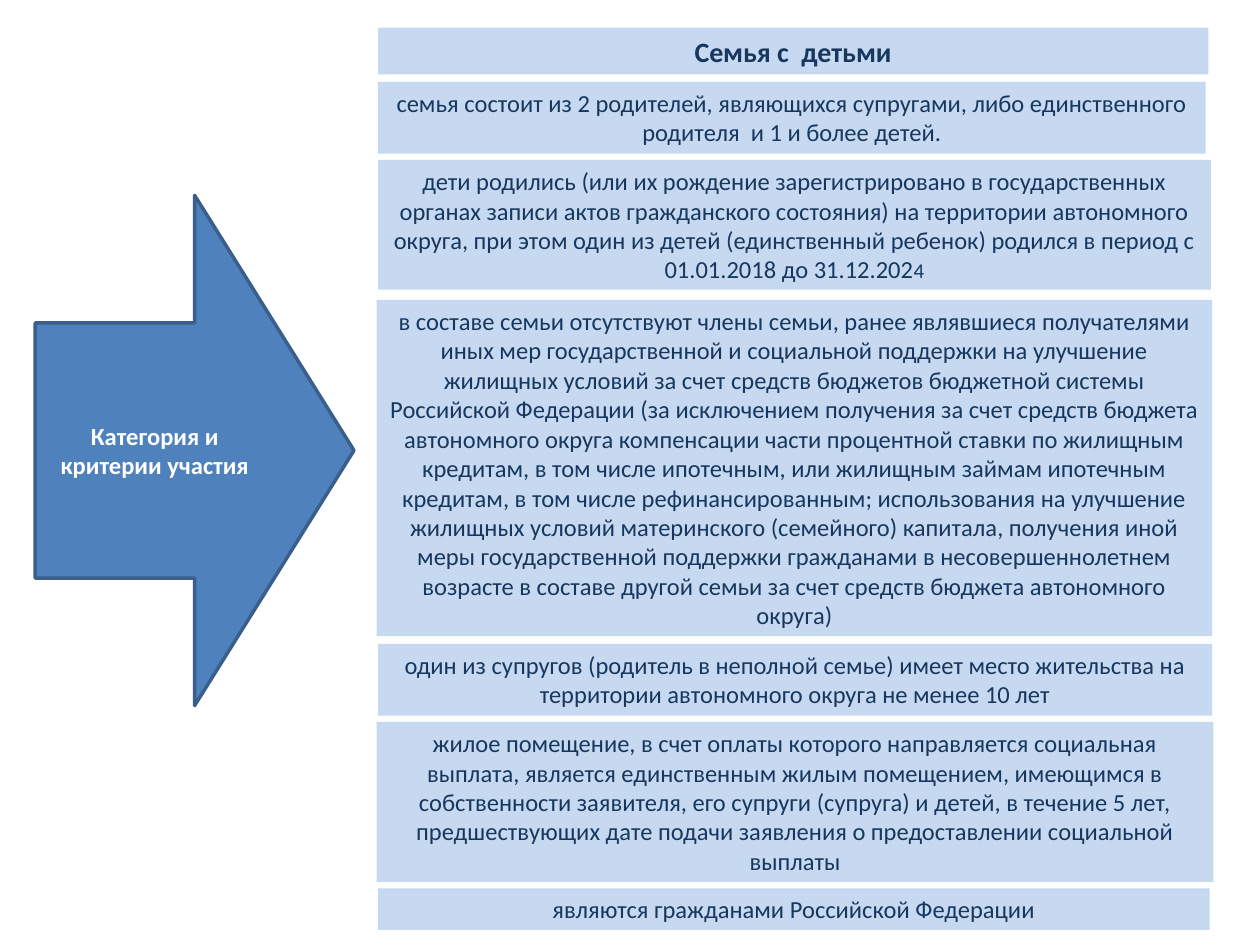
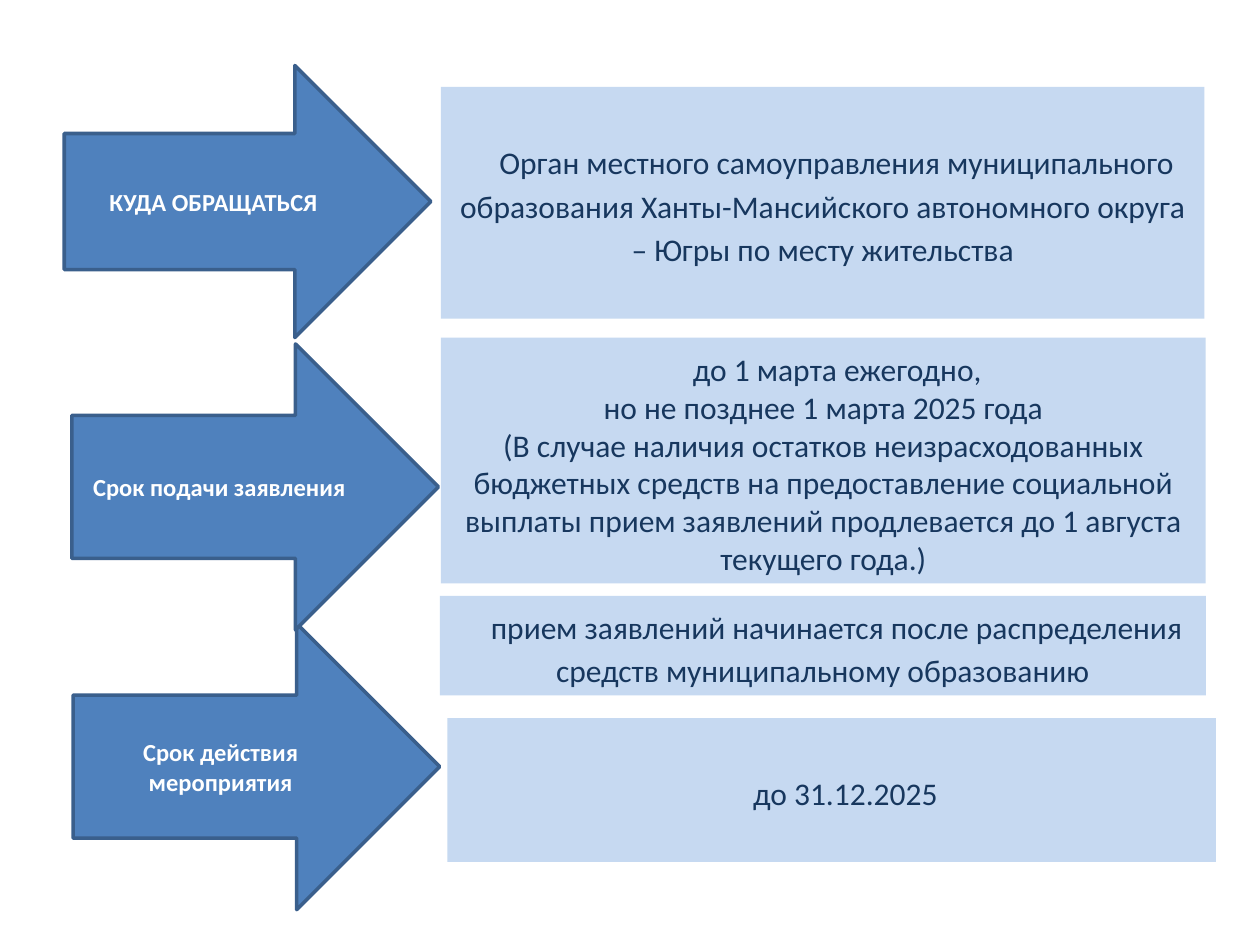
from pptx import Presentation
from pptx.dml.color import RGBColor
from pptx.enum.shapes import MSO_SHAPE
from pptx.enum.text import MSO_ANCHOR, MSO_AUTO_SIZE, PP_ALIGN
from pptx.util import Inches, Pt

RECTANGLE, ARROW = MSO_SHAPE.RECTANGLE, MSO_SHAPE.RIGHT_ARROW
TOP, MIDDLE = MSO_ANCHOR.TOP, MSO_ANCHOR.MIDDLE
CENTER = PP_ALIGN.CENTER
NO_AUTOFIT = MSO_AUTO_SIZE.NONE

PANEL = RGBColor(0xC6, 0xD9, 0xF1)
NAVY = RGBColor(0x17, 0x37, 0x5E)
BLUE = RGBColor(0x4F, 0x81, 0xBD)
BLUE_EDGE = RGBColor(0x3A, 0x5F, 0x8C)
WHITE = RGBColor(0xFF, 0xFF, 0xFF)
FONT = "Calibri"
BLANK_LAYOUT = 6

# Content: each place is left, top, width, height in inches
CRITERIA_ARROW = ((0.28, 1.55, 2.53, 4.05), "Категория и критерии участия")
FAMILY_HEADING = ((3, 0.22, 6.59, 0.37), "Семья с  детьми")
CRITERIA = [
    ((3, 0.65, 6.57, 0.57),
     "семья состоит из 2 родителей, являющихся супругами, либо единственного "
     "родителя  и 1 и более детей."),
    ((2.99, 2.38, 6.63, 2.67),
     "в составе семьи отсутствуют члены семьи, ранее являвшиеся получателями "
     "иных мер государственной и социальной поддержки на улучшение жилищных "
     "условий за счет средств бюджетов бюджетной системы Российской Федерации "
     "(за исключением получения за счет средств бюджета автономного округа "
     "компенсации части процентной ставки по жилищным кредитам, в том числе "
     "ипотечным, или жилищным займам ипотечным кредитам, в том числе "
     "рефинансированным; использования на улучшение жилищных условий "
     "материнского (семейного) капитала, получения иной меры государственной "
     "поддержки гражданами в несовершеннолетнем возрасте в составе другой семьи "
     "за счет средств бюджета автономного округа)"),
    ((3, 5.11, 6.62, 0.57),
     "один из супругов (родитель в неполной семье) имеет место жительства на "
     "территории автономного округа не менее 10 лет"),
    ((2.99, 5.73, 6.64, 1.27),
     "жилое помещение, в счет оплаты которого направляется социальная выплата, "
     "является единственным жилым помещением, имеющимся в собственности "
     "заявителя, его супруги (супруга) и детей, в течение 5 лет, предшествующих "
     "дате подачи заявления о предоставлении социальной выплаты"),
    ((3, 7.05, 6.6, 0.33), "являются гражданами Российской Федерации"),
]
BIRTH_PLACE = (3, 1.27, 6.61, 1.03)
BIRTH_TEXT = (
    "дети родились (или их рождение зарегистрировано в государственных органах "
    "записи актов гражданского состояния) на территории автономного округа, при "
    "этом один из детей (единственный ребенок) родился в период с 01.01.2018 до "
    "31.12.202")
BIRTH_LAST_DIGIT = "4"

# The upper arrow overlaps the lower one, so the lowest comes first
TERM_ARROWS = [
    ((0.58, 4.95, 2.91, 2.27), "Срок действия мероприятия"),
    ((0.57, 2.73, 2.91, 2.27), "Срок подачи заявления"),
    ((0.51, 0.52, 2.91, 2.16), "КУДА ОБРАЩАТЬСЯ"),
]
TERMS = [
    ((3.5, 0.69, 6.06, 1.84), MIDDLE,
     "Орган местного самоуправления муниципального образования "
     "Ханты-Мансийского автономного округа – Югры по месту жительства"),
    ((3.49, 4.73, 6.08, 0.79), TOP,
     "прием заявлений начинается после распределения средств муниципальному "
     "образованию"),
    ((3.55, 5.7, 6.1, 1.14), MIDDLE, "до 31.12.2025"),
]
DEADLINE_PLACE = (3.5, 2.68, 6.07, 1.95)
DEADLINE = "до 1 марта ежегодно,"
DEADLINE_DETAILS = (
    "но не позднее 1 марта 2025 года\n"
    "(В случае наличия остатков неизрасходованных бюджетных средств на "
    "предоставление социальной выплаты прием заявлений продлевается до "
    "1 августа текущего года.)")
TERM_FORMAT = {"size": 18, "indent": 0.22, "spacing": 1.15}


def format_span(span, size, color, bold=False):
    span.font.name = FONT
    span.font.size = Pt(size)
    span.font.bold = bold
    span.font.color.rgb = color


def write(para, text, size=14, color=NAVY, bold=False, indent=0, spacing=None):
    para.text = text
    para.alignment = CENTER
    if spacing:
        para.line_spacing = spacing
    if indent:
        properties = para._p.get_or_add_pPr()
        properties.set("marL", "0")
        properties.set("indent", str(Inches(indent)))
    for span in para.runs:
        format_span(span, size, color, bold)


def add_box(page, kind, place, fill, anchor):
    box = page.shapes.add_shape(kind, *map(Inches, place))
    box.shadow.inherit = False
    box.fill.solid()
    box.fill.fore_color.rgb = fill
    box.line.fill.background()
    frame = box.text_frame
    frame.word_wrap = True
    frame.auto_size = NO_AUTOFIT
    frame.vertical_anchor = anchor
    return box


def add_panel(page, place, text, anchor=TOP, **text_format):
    box = add_box(page, RECTANGLE, place, PANEL, anchor)
    write(box.text_frame.paragraphs[0], text, **text_format)
    return box


def add_arrow(page, place, text):
    box = add_box(page, ARROW, place, BLUE, MIDDLE)
    box.line.color.rgb = BLUE_EDGE
    box.line.width = Pt(2)
    write(box.text_frame.paragraphs[0], text, color=WHITE, bold=True)


def build_criteria(page):
    add_arrow(page, *CRITERIA_ARROW)
    add_panel(page, *FAMILY_HEADING, anchor=MIDDLE, size=16, bold=True)
    for place, text in CRITERIA:
        add_panel(page, place, text)

    # Birth condition ends in a smaller digit
    birth = add_panel(page, BIRTH_PLACE, BIRTH_TEXT)
    digit = birth.text_frame.paragraphs[0].add_run()
    digit.text = BIRTH_LAST_DIGIT
    format_span(digit, 12, NAVY)


def build_terms(page):
    for place, text in TERM_ARROWS:
        add_arrow(page, place, text)
    for place, anchor, text in TERMS:
        add_panel(page, place, text, anchor, **TERM_FORMAT)

    # Application deadline with its details below
    deadline = add_panel(page, DEADLINE_PLACE, DEADLINE, MIDDLE, **TERM_FORMAT)
    write(deadline.text_frame.add_paragraph(), DEADLINE_DETAILS, size=18)


def main():
    deck = Presentation()
    deck.slide_width, deck.slide_height = Inches(10), Inches(7.5)
    for build in (build_criteria, build_terms):
        build(deck.slides.add_slide(deck.slide_layouts[BLANK_LAYOUT]))
    deck.save("out.pptx")


if __name__ == "__main__":
    main()
